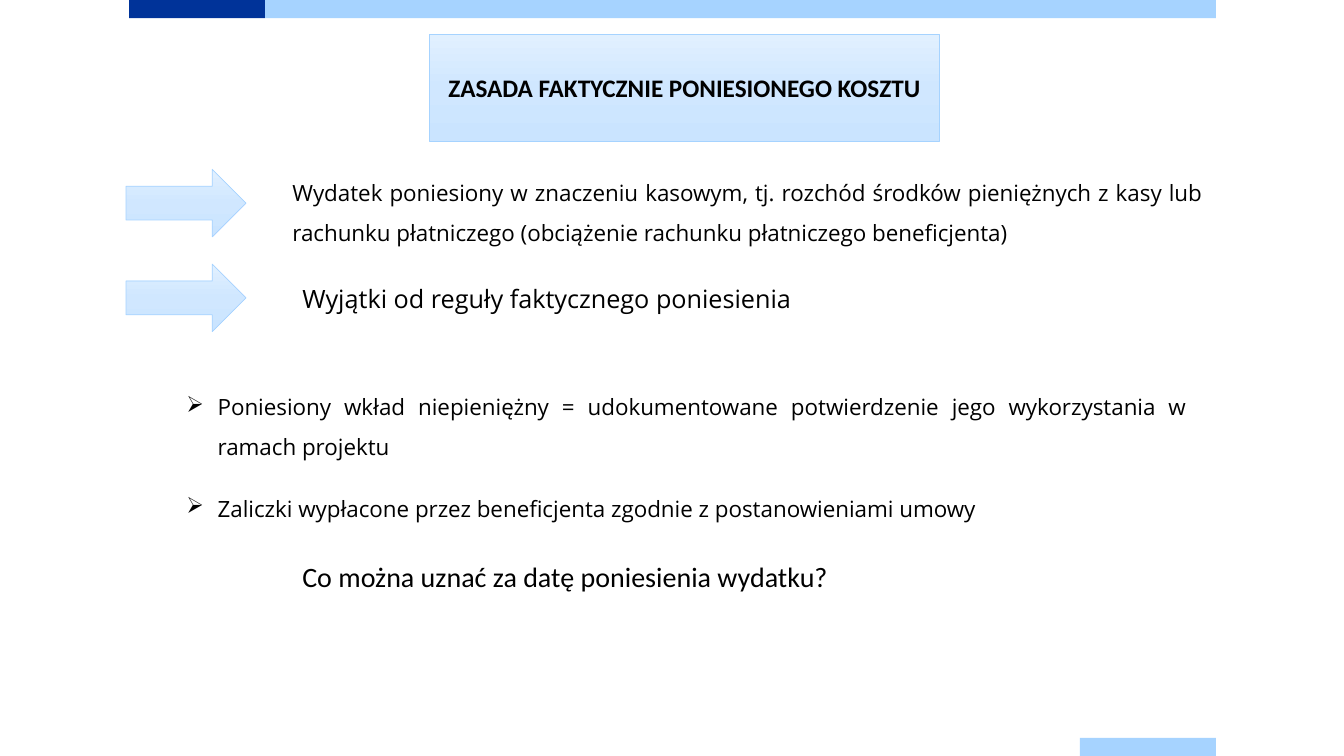
from copy import deepcopy

from lxml import etree
from pptx import Presentation
from pptx.dml.color import RGBColor
from pptx.enum.shapes import MSO_SHAPE
from pptx.enum.text import MSO_ANCHOR, PP_ALIGN
from pptx.oxml.ns import qn
from pptx.util import Inches, Pt

RECT, ARROW = MSO_SHAPE.RECTANGLE, MSO_SHAPE.RIGHT_ARROW
LEFT, CENTER, JUSTIFY = PP_ALIGN.LEFT, PP_ALIGN.CENTER, PP_ALIGN.JUSTIFY
MIDDLE = MSO_ANCHOR.MIDDLE

COLORS = {"navy": "003399", "sky": "A6D3FF", "text": "000000"}
GRADIENT = {0: "E1F0FF", 0.5: "D0E7FF", 1: "CAE4FF"}
BULLET_INDENT = 0.31


def rgb(name):
    return RGBColor.from_string(COLORS[name])


def add_shape(slide, kind, left, top, width, height):
    shape = slide.shapes.add_shape(
        kind, Inches(left), Inches(top), Inches(width), Inches(height))
    shape.shadow.inherit = False
    return shape


def add_bar(slide, left, top, width, color):
    bar = add_shape(slide, RECT, left, top, width, 0.18)
    bar.fill.solid()
    bar.fill.fore_color.rgb = rgb(color)
    bar.line.fill.background()


def add_gradient_shape(slide, kind, left, top, width, height):
    shape = add_shape(slide, kind, left, top, width, height)
    shape.fill.gradient()
    shape.fill.gradient_angle = 270
    stop_list = next(shape._element.spPr.iter(qn("a:gsLst")))
    stop_list.append(deepcopy(stop_list[0]))
    for stop, (position, color) in zip(shape.fill.gradient_stops, GRADIENT.items()):
        stop.position = position
        stop.color.rgb = RGBColor.from_string(color)
    shape.line.color.rgb = rgb("sky")
    shape.line.width = Pt(0.5)
    return shape


def add_bullet(paragraph):
    properties = paragraph._p.get_or_add_pPr()
    properties.set("marL", str(Inches(BULLET_INDENT)))
    properties.set("indent", str(-Inches(BULLET_INDENT)))
    etree.SubElement(properties, qn("a:buChar")).set("char", "➢")


def write(frame, text, size, font="Open Sans", align=LEFT, spacing=None,
          bold=False, bullet=False):
    frame.word_wrap = True
    paragraph = frame.paragraphs[0]
    paragraph.text = text
    if bullet:
        add_bullet(paragraph)
    paragraph.alignment = align
    if spacing:
        paragraph.line_spacing = spacing
    paragraph.font.name = font
    paragraph.font.size = Pt(size)
    paragraph.font.bold = bold
    paragraph.font.color.rgb = rgb("text")


def add_text(slide, left, top, width, height, text, size, **style):
    box = slide.shapes.add_textbox(
        Inches(left), Inches(top), Inches(width), Inches(height))
    write(box.text_frame, text, size, **style)
    return box.text_frame


def main():
    prs = Presentation()
    prs.slide_width, prs.slide_height = Inches(13.33), Inches(7.5)
    slide = prs.slides.add_slide(prs.slide_layouts[6])

    # Edge bars
    add_bar(slide, 1.28, 0, 1.35, "navy")
    add_bar(slide, 2.63, 0, 9.43, "sky")
    add_bar(slide, 10.71, 7.32, 1.35, "sky")

    # Title
    title = add_gradient_shape(slide, RECT, 4.26, 0.34, 5.06, 1.06)
    title.text_frame.vertical_anchor = MIDDLE
    write(title.text_frame, "ZASADA FAKTYCZNIE PONIESIONEGO KOSZTU", 18,
          font="Calibri", align=CENTER, bold=True)

    # Rule and its exceptions, each led by an arrow
    for arrow_top in (1.68, 2.62):
        add_gradient_shape(slide, ARROW, 1.25, arrow_top, 1.19, 0.67)
    rule = add_text(
        slide, 2.9, 1.64, 9.03, 1.53,
        "Wydatek poniesiony w znaczeniu kasowym, tj. rozchód środków pieniężnych "
        "z kasy lub rachunku płatniczego (obciążenie rachunku płatniczego "
        "beneficjenta)", 16, align=JUSTIFY, spacing=1.5)
    rule.margin_left = rule.margin_top = rule.margin_right = rule.margin_bottom = 0
    add_text(slide, 2.9, 2.76, 5.13, 0.4,
             "Wyjątki od reguły faktycznego poniesienia", 18)

    # Exceptions
    add_text(slide, 1.75, 3.72, 10.12, 0.87,
             "Poniesiony wkład niepieniężny = udokumentowane potwierdzenie jego "
             "wykorzystania w ramach projektu", 16,
             align=JUSTIFY, spacing=1.5, bullet=True)
    add_text(slide, 1.75, 4.86, 9.75, 0.37,
             "Zaliczki wypłacone przez beneficjenta zgodnie z postanowieniami umowy",
             16, bullet=True)

    # Closing question
    add_text(slide, 2.9, 5.5, 7.13, 0.44,
             "Co można uznać za datę poniesienia wydatku?", 20, font="Calibri")

    prs.save("out.pptx")


if __name__ == "__main__":
    main()
